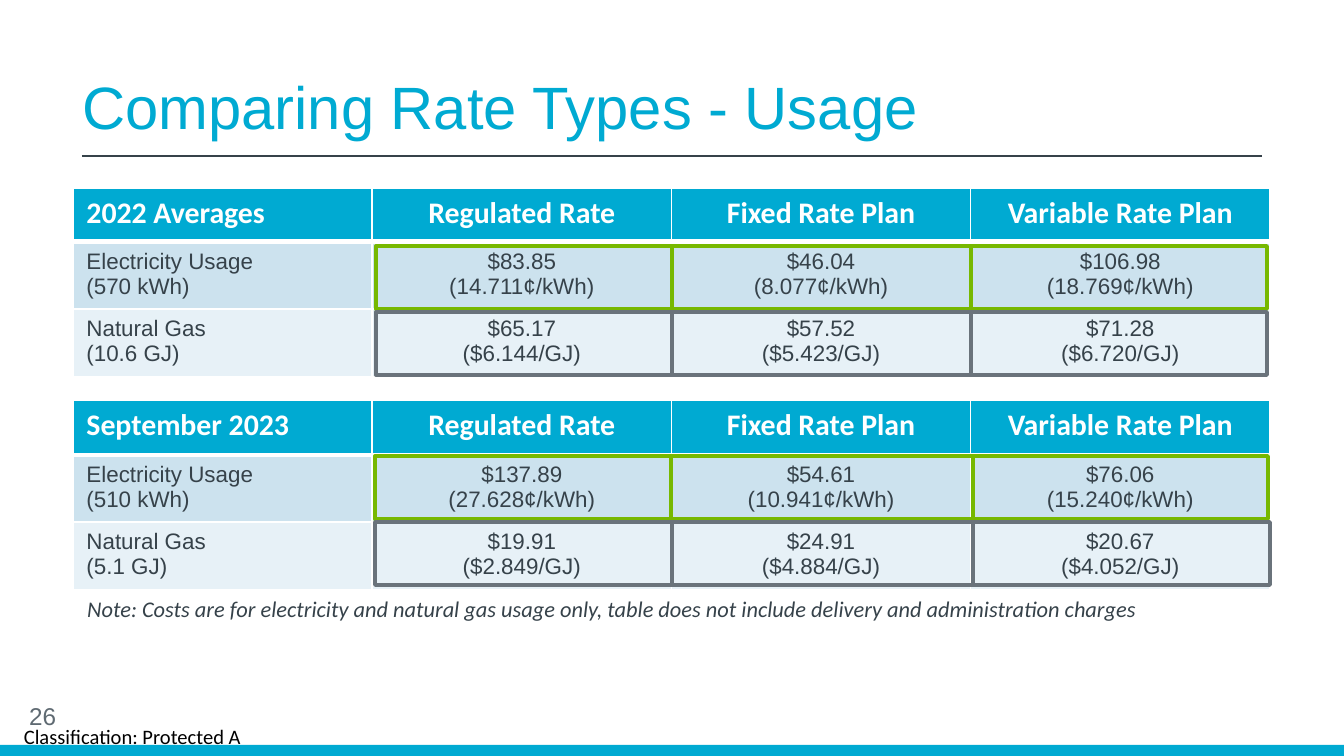
from lxml.etree import SubElement
from pptx import Presentation
from pptx.dml.color import RGBColor
from pptx.enum.shapes import MSO_CONNECTOR, MSO_SHAPE
from pptx.enum.text import MSO_ANCHOR, PP_ALIGN
from pptx.oxml.ns import qn
from pptx.util import Pt

PX = 914400 / 134.4
COLORS = {
    "blue": "00AAD2",
    "ink": "36424A",
    "grey": "5F6A72",
    "gas": "6A737B",
    "electricity": "77B800",
    "row_dark": "CCE2EE",
    "row_light": "E7F1F7",
    "white": "FFFFFF",
    "black": "000000",
}
RGB = {name: RGBColor.from_string(value) for name, value in COLORS.items()}


def px(*lengths):
    return [round(length * PX) for length in lengths]


def write(frame, text, size=12, font="Arial", color="ink", bold=False,
          italic=False, align=PP_ALIGN.LEFT, anchor=MSO_ANCHOR.TOP):
    frame.word_wrap = True
    frame.vertical_anchor = anchor
    for index, line in enumerate(text.split("\n")):
        paragraph = frame.paragraphs[0] if index == 0 else frame.add_paragraph()
        paragraph.alignment = align
        run = paragraph.add_run()
        run.text = line
        run.font.size = Pt(size)
        run.font.name = font
        run.font.bold = bold
        run.font.italic = italic
        run.font.color.rgb = RGB[color]


presentation = Presentation()
presentation.slide_width, presentation.slide_height = px(1344, 756)
slide = presentation.slides.add_slide(presentation.slide_layouts[6])
shapes = slide.shapes

footer_bar = shapes.add_shape(MSO_SHAPE.RECTANGLE, *px(0, 745, 1344, 11))
footer_bar.shadow.inherit = False
footer_bar.fill.solid()
footer_bar.fill.fore_color.rgb = RGB["blue"]
footer_bar.line.fill.background()

classification = shapes.add_textbox(*px(0, 715, 265, 42)).text_frame
classification.margin_left = classification.margin_right = 0
classification.margin_top = classification.margin_bottom = 0
write(classification, "Classification: Protected A", size=11, font="Calibri",
      color="black", align=PP_ALIGN.CENTER, anchor=MSO_ANCHOR.MIDDLE)

title_rule = shapes.add_connector(MSO_CONNECTOR.STRAIGHT, *px(82, 156, 1262, 156))
title_rule.line.color.rgb = RGB["ink"]
title_rule.line.width = Pt(0.75)
SubElement(title_rule._element.spPr, qn("a:effectLst"))

title = shapes.add_textbox(*px(69, 64, 1208, 84)).text_frame
write(title, "Comparing Rate Types - Usage", size=32, color="blue",
      anchor=MSO_ANCHOR.BOTTOM)
slide_number = shapes.add_textbox(*px(16, 696, 302, 40)).text_frame
write(slide_number, "26", size=13, color="grey", anchor=MSO_ANCHOR.MIDDLE)
note = shapes.add_textbox(*px(74, 589, 1197, 40)).text_frame
write(note, "Note: Costs are for electricity and natural gas usage only, "
      "table does not include delivery and administration charges",
      font="Calibri", italic=True)

PLANS = ["Regulated Rate", "Fixed Rate Plan", "Variable Rate Plan"]
ROW_FILLS = ["blue", "row_dark", "row_light"]
rate_tables = [
    (73, 188, [54, 64, 64], [
        ["2022 Averages", *PLANS],
        ["Electricity Usage\n(570 kWh)", "$83.85\n(14.711¢/kWh)",
         "$46.04\n(8.077¢/kWh)", "$106.98\n(18.769¢/kWh)"],
        ["Natural Gas\n(10.6 GJ)", "$65.17\n($6.144/GJ)",
         "$57.52\n($5.423/GJ)", "$71.28\n($6.720/GJ)"],
    ]),
    (73, 400, [55, 67, 67], [
        ["September 2023", *PLANS],
        ["Electricity Usage\n(510 kWh)", "$137.89\n(27.628¢/kWh)",
         "$54.61\n(10.941¢/kWh)", "$76.06\n(15.240¢/kWh)"],
        ["Natural Gas\n(5.1 GJ)", "$19.91\n($2.849/GJ)",
         "$24.91\n($4.884/GJ)", "$20.67\n($4.052/GJ)"],
    ]),
]
for left, top, heights, rows in rate_tables:
    table = shapes.add_table(3, 4, *px(left, top, 1197, sum(heights))).table
    for column in table.columns:
        column.width = px(299.25)[0]
    for row_index, row in enumerate(rows):
        table.rows[row_index].height = px(heights[row_index])[0]
        for column_index, text in enumerate(row):
            cell = table.cell(row_index, column_index)
            properties = cell._tc.get_or_add_tcPr()
            for side in "LRTB":
                thick = (row_index, side) in [(0, "B"), (1, "T")]
                border = SubElement(properties, qn(f"a:ln{side}"),
                                    w=str(Pt(3 if thick else 1)))
                border_fill = SubElement(border, qn("a:solidFill"))
                SubElement(border_fill, qn("a:srgbClr"), val=COLORS["white"])
            cell.fill.solid()
            cell.fill.fore_color.rgb = RGB[ROW_FILLS[row_index]]
            align = PP_ALIGN.CENTER if column_index else PP_ALIGN.LEFT
            if row_index == 0:
                write(cell.text_frame, text, size=16, font="Calibri",
                      color="white", bold=True, align=align)
            else:
                write(cell.text_frame, text, align=align)

outline_rows = [
    (246, "electricity", [376, 672, 971, 1267]),
    (312, "gas", [376, 672, 971, 1267]),
    (456, "electricity", [375, 671, 973, 1268]),
    (522, "gas", [375, 672, 973, 1270]),
]
for top, color, edges in outline_rows:
    for left, right in zip(edges, edges[1:]):
        outline = shapes.add_shape(MSO_SHAPE.RECTANGLE,
                                   *px(left, top, right - left, 63))
        outline.shadow.inherit = False
        outline.fill.background()
        outline.line.color.rgb = RGB[color]
        outline.line.width = Pt(2)

presentation.save("out.pptx")
